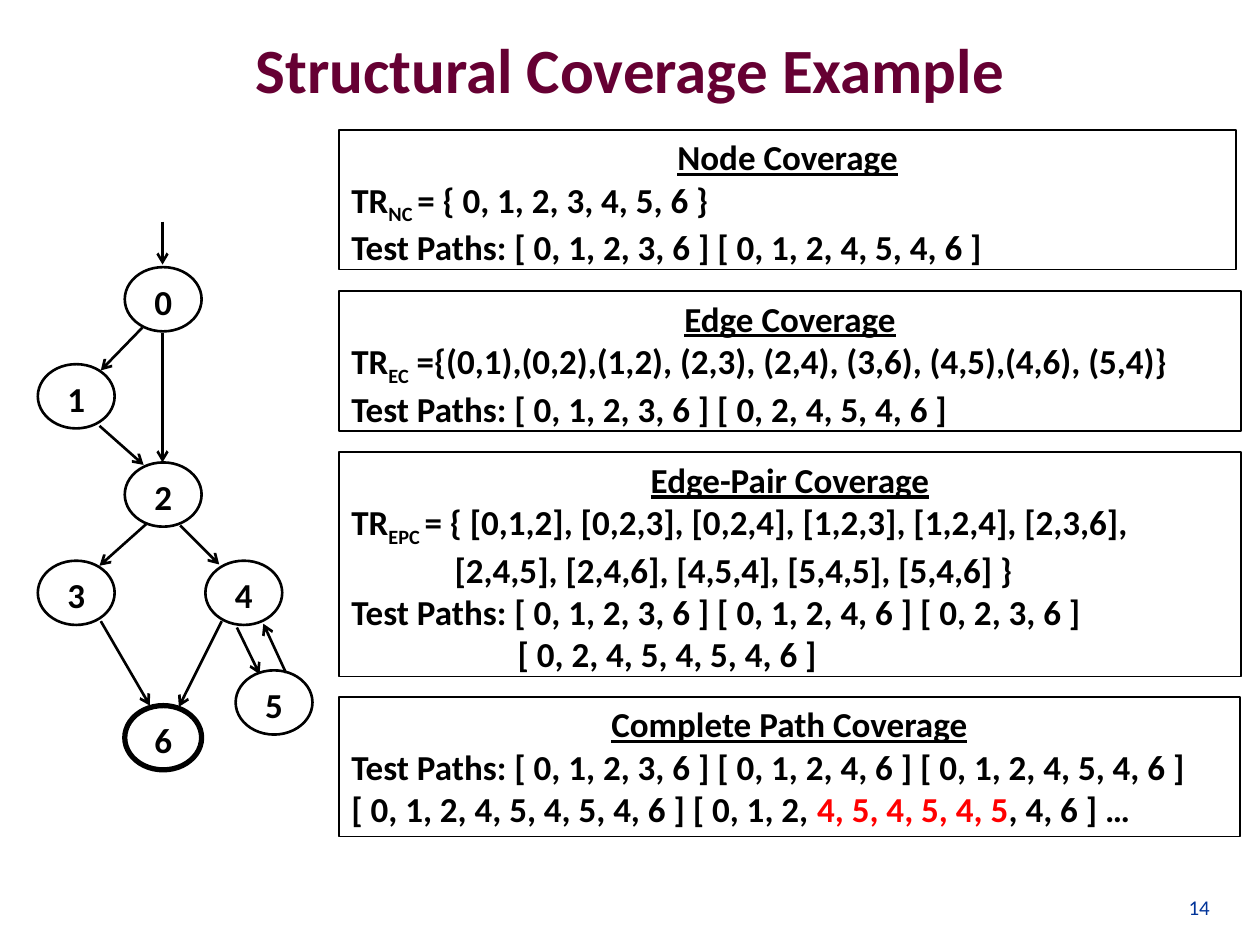
from lxml import etree
from pptx import Presentation
from pptx.dml.color import RGBColor
from pptx.enum.shapes import MSO_CONNECTOR, MSO_SHAPE
from pptx.enum.text import MSO_ANCHOR, PP_ALIGN
from pptx.oxml.ns import qn
from pptx.util import Inches, Pt

LINE = MSO_CONNECTOR.STRAIGHT
RECT, OVAL = MSO_SHAPE.RECTANGLE, MSO_SHAPE.OVAL
TOP, MIDDLE, BOTTOM = MSO_ANCHOR.TOP, MSO_ANCHOR.MIDDLE, MSO_ANCHOR.BOTTOM
LEFT, CENTER, RIGHT = PP_ALIGN.LEFT, PP_ALIGN.CENTER, PP_ALIGN.RIGHT
BLACK = RGBColor(0x00, 0x00, 0x00)
RED = RGBColor(0xFF, 0x00, 0x00)
WINE = RGBColor(0x66, 0x00, 0x33)
BLUE = RGBColor(0x00, 0x33, 0x99)

BODY = {"name": "Calibri", "size": Pt(20), "bold": True}
HEAD = {**BODY, "underline": True}


def add_run(para, text, style, color=BLACK):
    run = para.add_run()
    run.text = text
    for key, value in style.items():
        setattr(run.font, key, value)
    run.font.color.rgb = color
    return run


def add_outline(kind, box, width):
    """Add an unfilled shape with a black outline."""
    shape = slide.shapes.add_shape(kind, *map(Inches, box))
    shape.shadow.inherit = False
    shape.fill.background()
    shape.line.color.rgb = BLACK
    shape.line.width = Pt(width)
    return shape


deck = Presentation()
deck.slide_width, deck.slide_height = Inches(10), Inches(7.5)
slide = deck.slides.add_slide(deck.slide_layouts[6])

# Title and page number
labels = [
    ("Structural Coverage Example", (0.5, -0.08, 9, 1.25), MIDDLE, CENTER,
     {**BODY, "size": Pt(36)}, WINE),
    ("14", (9.01, 6.83, 0.69, 0.52), BOTTOM, RIGHT,
     {"name": "Calibri", "size": Pt(12)}, BLUE),
]
for text, box, anchor, align, style, color in labels:
    frame = slide.shapes.add_textbox(*map(Inches, box)).text_frame
    frame.word_wrap = True
    frame.vertical_anchor = anchor
    frame.paragraphs[0].alignment = align
    add_run(frame.paragraphs[0], text, style, color)

# Coverage panels: top, width, height, heading, lines of (indent, runs)
panels = [
    (1.03, 7.12, 1.11, "Node Coverage", [
        (0, [("TR", ""), ("NC ", "sub"), ("= { 0, 1, 2, 3, 4, 5, 6 }", "")]),
        (0, [("Test Paths: [ 0, 1, 2, 3, 6 ] [ 0, 1, 2, 4, 5, 4, 6 ]", "")]),
    ]),
    (2.31, 7.16, 1.11, "Edge Coverage", [
        (0, [("TR", ""), ("EC", "sub"),
             (" ={(0,1),(0,2),(1,2), (2,3), (2,4), (3,6), (4,5),(4,6), (5,4)}", "")]),
        (0, [("Test Paths: [ 0, 1, 2, 3, 6 ] [ 0, 2, 4, 5, 4, 6 ]", "")]),
    ]),
    (3.59, 7.16, 1.78, "Edge-Pair Coverage", [
        (0, [("TR", ""), ("EPC ", "sub"),
             ("= { [0,1,2], [0,2,3], [0,2,4], [1,2,3], [1,2,4], [2,3,6],", "")]),
        (0.82, [("[2,4,5], [2,4,6], [4,5,4], [5,4,5], [5,4,6] }", "")]),
        (0, [("Test Paths: [ 0, 1, 2, 3, 6 ] [ 0, 1, 2, 4, 6 ] [ 0, 2, 3, 6 ]", "")]),
        (1.32, [("[ 0, 2, 4, 5, 4, 5, 4, 6 ]", "")]),
    ]),
    (5.53, 7.15, 1.11, "Complete Path Coverage", [
        (0, [("Test Paths: [ 0, 1, 2, 3, 6 ] [ 0, 1, 2, 4, 6 ] [ 0, 1, 2, 4, 5, 4, 6 ] "
              "[ 0, 1, 2, 4, 5, 4, 5, 4, 6 ] [ 0, 1, 2, ", ""),
             ("4, 5, 4, 5, 4, 5", "red"), (", 4, 6 ] …", "")]),
    ]),
]
for top, width, height, title, lines in panels:
    frame = add_outline(RECT, (2.69, top, width, height), 1).text_frame
    frame.word_wrap = True
    frame.vertical_anchor = TOP
    frame.paragraphs[0].alignment = CENTER
    add_run(frame.paragraphs[0], title, HEAD)
    for indent, runs in lines:
        para = frame.add_paragraph()
        para.alignment = LEFT
        if indent:
            para._p.get_or_add_pPr().set("marL", str(Inches(indent)))
        for text, mark in runs:
            run = add_run(para, text, BODY, RED if mark == "red" else BLACK)
            if mark == "sub":
                run._r.get_or_add_rPr().set("baseline", "-25000")

# Graph nodes: left, top; the final node has a heavy outline
nodes = {
    "0": (0.99, 2.12), "1": (0.3, 2.89), "2": (0.99, 3.67), "3": (0.3, 4.45),
    "4": (1.63, 4.45), "5": (1.87, 5.32), "6": (0.99, 5.6),
}
for name, (left, top) in nodes.items():
    node = add_outline(OVAL, (left, top, 0.61, 0.51), 3 if name == "6" else 1.5)
    frame = node.text_frame
    frame.word_wrap = False
    frame.vertical_anchor = MIDDLE
    frame.margin_top = Inches(0.03)
    frame.margin_bottom = 0
    frame.paragraphs[0].alignment = CENTER
    add_run(frame.paragraphs[0], name, BODY)

# Graph edges: start x, y, end x, y
edges = [
    (1.29, 1.76, 1.29, 2.1),   # entry
    (1.13, 2.6, 0.8, 2.94),    # 0 to 1
    (1.29, 2.64, 1.29, 3.67),  # 0 to 2
    (0.79, 3.38, 1.14, 3.69),  # 1 to 2
    (1.16, 4.16, 0.79, 4.49),  # 2 to 3
    (1.43, 4.17, 1.74, 4.48),  # 2 to 4
    (0.8, 4.93, 1.19, 5.6),    # 3 to 6
    (1.76, 4.93, 1.42, 5.61),  # 4 to 6
    (1.88, 4.98, 2.06, 5.35),  # 4 to 5
    (2.27, 5.34, 2.09, 4.95),  # 5 to 4
]
for ends in edges:
    edge = slide.shapes.add_connector(LINE, *map(Inches, ends))
    edge.line.color.rgb = BLACK
    edge.line.width = Pt(1.5)
    etree.SubElement(edge.line._get_or_add_ln(), qn("a:tailEnd"), type="arrow")
    etree.SubElement(edge._element.spPr, qn("a:effectLst"))

deck.save("out.pptx")
